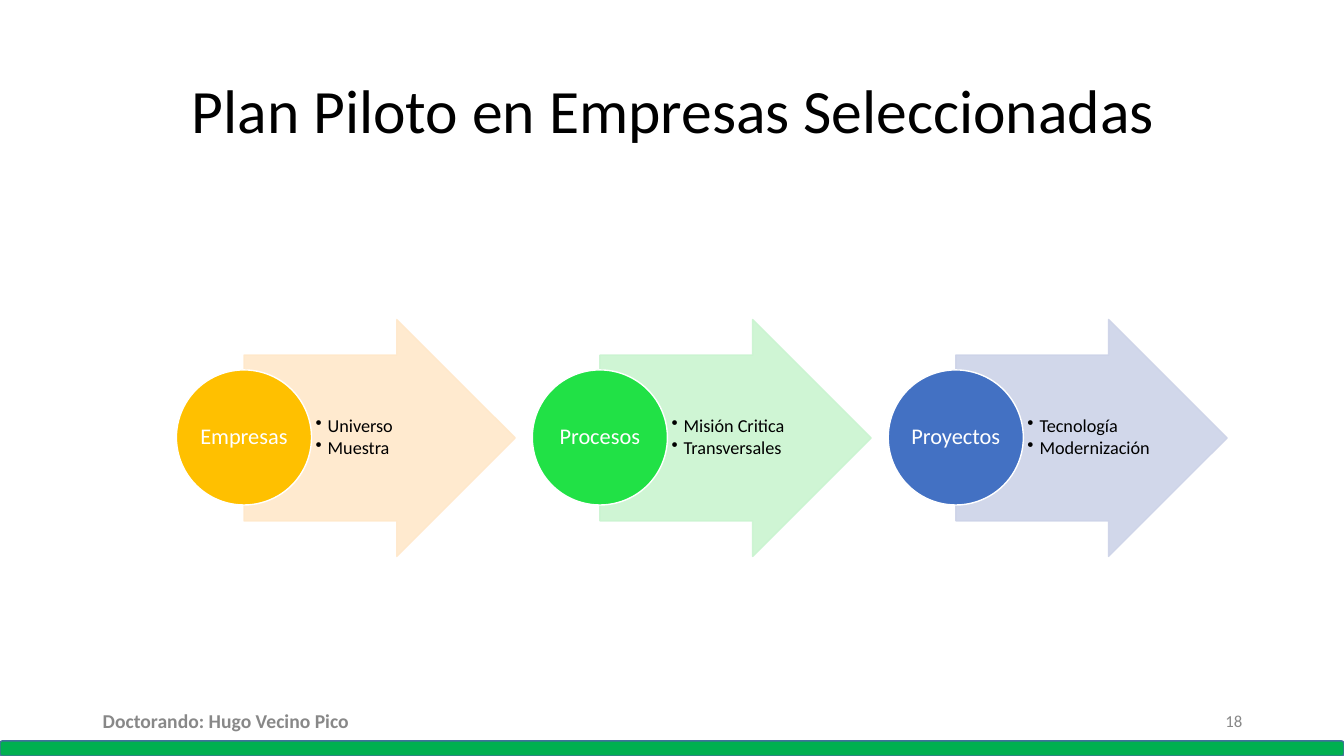
"""Build the pilot plan slide: three arrows, each led by a labelled circle."""
from dataclasses import dataclass

from lxml.etree import SubElement
from pptx import Presentation
from pptx.dml.color import RGBColor
from pptx.enum.shapes import MSO_SHAPE as SHAPE
from pptx.enum.text import MSO_ANCHOR as ANCHOR, MSO_AUTO_SIZE as AUTO, PP_ALIGN as ALIGN
from pptx.oxml.ns import qn
from pptx.util import Pt

PX = 9144
COLORS = {
    "white": "FFFFFF", "black": "000000", "gray": "888888",
    "bar": "00B050", "bar_line": "42719B",
    "amber": "FFC000", "amber_pale": "FFE8CA",
    "green": "21E146", "green_pale": "CAF4D0",
    "blue": "4371C3", "blue_pale": "CDD3E8",
}
TITLE = {"size": Pt(44), "bold": False}
AUTHOR = {"size": Pt(14), "bold": True}
NUMBER = {"size": Pt(12), "bold": False}
LABEL = {"size": Pt(16), "bold": False}
ITEM = {"size": Pt(13), "bold": False}
STAGE_LEFT, STAGE_STEP = 175, 353
CIRCLE, CIRCLE_TOP = 134, 367
ARROW_W, ARROW_H, ARROW_TOP = 269, 235, 317
LIST_W, LIST_H, LIST_TOP = 131, 164, 352


@dataclass(frozen=True)
class Box:
    left: int
    top: int
    width: int
    height: int

    def emu(self) -> tuple:
        return tuple(v * PX for v in (self.left, self.top, self.width, self.height))


@dataclass(frozen=True)
class Stage:
    label: str
    items: tuple
    color: str
    pale: str


STAGES = (
    Stage("Empresas", ("Universo", "Muestra"), "amber", "amber_pale"),
    Stage("Procesos", ("Misión Critica", "Transversales"), "green", "green_pale"),
    Stage("Proyectos", ("Tecnología", "Modernización"), "blue", "blue_pale"),
)


def rgb(name: str) -> RGBColor:
    return RGBColor.from_string(COLORS[name])


def add_shape(slide, kind, box: Box, fill: str, line: str):
    sp = slide.shapes.add_shape(kind, *box.emu())
    sp.shadow.inherit = False
    sp.fill.solid()
    sp.fill.fore_color.rgb = rgb(fill)
    sp.line.color.rgb = rgb(line)
    sp.line.width = Pt(1)
    return sp


def set_alpha(sp, percent: int) -> None:
    for clr in sp._element.spPr.iter(qn("a:srgbClr")):
        SubElement(clr, qn("a:alpha"), val=str(percent * 1000))


def add_bullet(p) -> None:
    pPr = p._p.get_or_add_pPr()
    pPr.set("marL", str(12 * PX))
    pPr.set("indent", str(-12 * PX))
    SubElement(SubElement(pPr, qn("a:buClr")), qn("a:srgbClr"), val=COLORS["black"])
    SubElement(pPr, qn("a:buChar"), char="•")


def write(sp, lines: tuple, font: dict, color: str, align=ALIGN.LEFT,
          insets: tuple = (10, 5, 10, 5), spacing: float = 0.9, bullets: bool = False) -> None:
    tf = sp.text_frame
    frame = dict(zip(("margin_left", "margin_top", "margin_right", "margin_bottom"),
                     (v * PX for v in insets)))
    frame.update(word_wrap=True, auto_size=AUTO.NONE, vertical_anchor=ANCHOR.MIDDLE)
    for name, value in frame.items():
        setattr(tf, name, value)
    for i, line in enumerate(lines):
        p = tf.add_paragraph() if i else tf.paragraphs[0]
        if bullets:
            add_bullet(p)
            p.level = 1
        p.alignment = align
        p.line_spacing = spacing
        p.space_before = Pt(1.9 if i else 0)
        r = p.add_run()
        r.text = line
        for name, value in {"name": "Calibri", **font}.items():
            setattr(r.font, name, value)
        r.font.color.rgb = rgb(color)


def add_stage(slide, stage: Stage, left: int) -> None:
    arrow_box = Box(left + CIRCLE // 2, ARROW_TOP, ARROW_W, ARROW_H)
    arrow = add_shape(slide, SHAPE.RIGHT_ARROW, arrow_box, stage.pale, stage.pale)
    arrow.adjustments[0] = 0.7
    arrow.adjustments[1] = 0.5
    set_alpha(arrow, 90)
    items = slide.shapes.add_textbox(*Box(left + CIRCLE, LIST_TOP, LIST_W, LIST_H).emu())
    write(items, stage.items, ITEM, "black", insets=(4, 1, 2, 1), bullets=True)
    circle_box = Box(left, CIRCLE_TOP, CIRCLE, CIRCLE)
    circle = add_shape(slide, SHAPE.OVAL, circle_box, stage.color, "white")
    write(circle, (stage.label,), LABEL, "white", ALIGN.CENTER, (1, 1, 1, 1))


def main() -> None:
    prs = Presentation()
    prs.slide_width, prs.slide_height = 1333 * PX, 750 * PX
    slide = prs.slides.add_slide(prs.slide_layouts[5])
    add_shape(slide, SHAPE.ROUNDED_RECTANGLE, Box(0, 735, 1333, 15), "bar", "bar_line")
    title = slide.shapes.title
    title.left, title.top, title.width, title.height = Box(119, 40, 1098, 145).emu()
    write(title, ("Plan Piloto en Empresas Seleccionadas",), TITLE, "black", ALIGN.CENTER)
    author = slide.shapes.add_textbox(*Box(92, 695, 450, 40).emu())
    write(author, ("Doctorando: Hugo Vecino Pico",), AUTHOR, "gray", spacing=1.0)
    number = slide.shapes.add_textbox(*Box(942, 695, 300, 40).emu())
    write(number, ("18",), NUMBER, "gray", ALIGN.RIGHT, spacing=1.0)
    for i, stage in enumerate(STAGES):
        add_stage(slide, stage, STAGE_LEFT + i * STAGE_STEP)
    prs.save("out.pptx")


if __name__ == "__main__":
    main()
